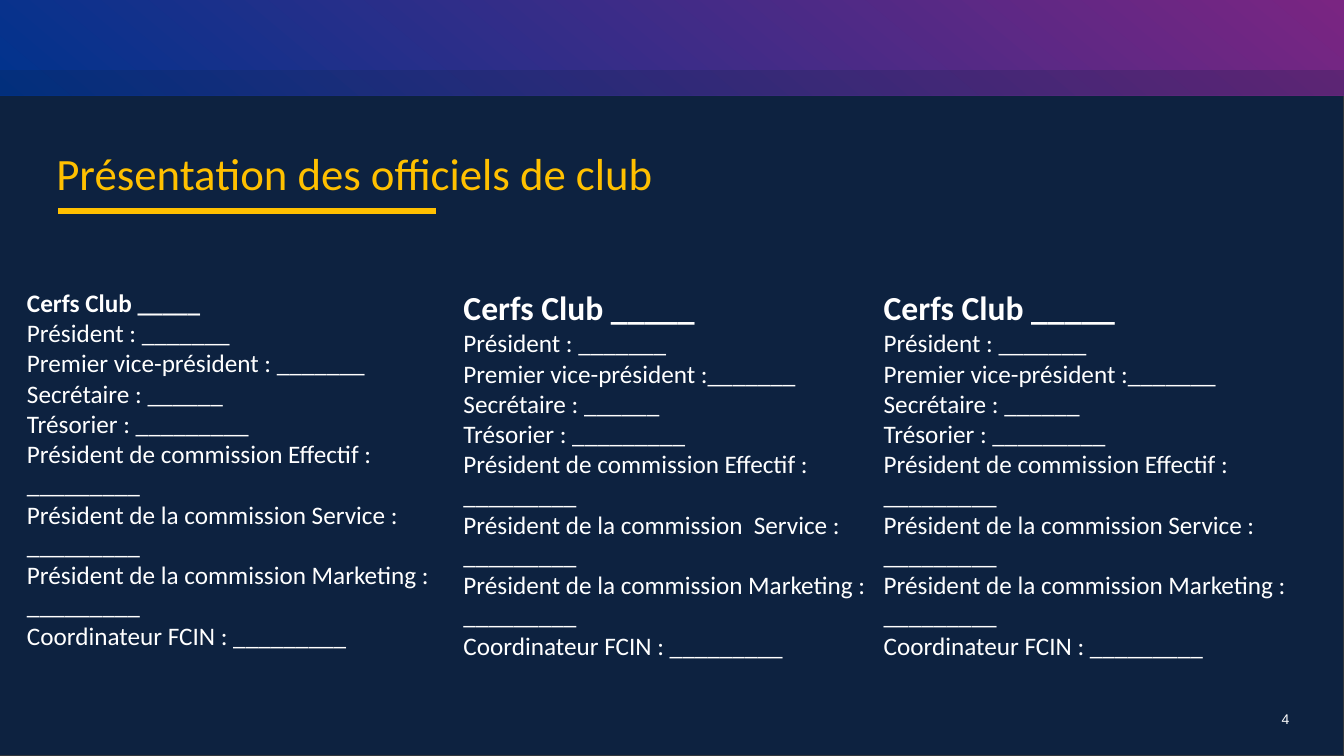
from dataclasses import dataclass

from lxml.etree import SubElement
from pptx import Presentation
from pptx.dml.color import RGBColor
from pptx.enum.shapes import MSO_CONNECTOR, MSO_SHAPE
from pptx.enum.text import MSO_ANCHOR as ANCHOR, MSO_AUTO_SIZE as AUTO_SIZE, PP_ALIGN as ALIGN
from pptx.oxml.ns import qn
from pptx.util import Cm, Pt


@dataclass(frozen=True)
class Theme:
    """Colours, fonts and type sizes of the slide."""
    navy: RGBColor = RGBColor(0x0D, 0x22, 0x40)
    outline: RGBColor = RGBColor(0x33, 0x37, 0x3B)
    blue: RGBColor = RGBColor(0x00, 0x33, 0x8D)
    purple: RGBColor = RGBColor(0x7A, 0x25, 0x82)
    gold: RGBColor = RGBColor(0xFF, 0xC0, 0x00)
    white: RGBColor = RGBColor(0xFF, 0xFF, 0xFF)
    font: str = "Calibri"
    number_font: str = "Arial"
    title_size: int = 32
    heading_size: int = 24
    body_size: int = 18
    number_size: int = 10


THEME = Theme()
WIDTH, HEIGHT = 33.87, 19.05
COLUMN_TOP = 7.11
CLUB = "Cerfs Club _____"


def officers(vice_gap=" ", service_gap=" "):
    """Return the officer lines of one club."""
    return [
        "Président : _______",
        f"Premier vice-président :{vice_gap}_______",
        "Secrétaire : ______",
        "Trésorier : _________",
        "Président de commission Effectif : _________",
        f"Président de la commission{service_gap}Service : _________",
        "Président de la commission Marketing : _________",
        "Coordinateur FCIN : _________",
    ]


COLUMNS = [
    ((0.43, COLUMN_TOP, 11.05, 9.5), THEME.body_size, officers()),
    ((11.43, COLUMN_TOP, 11.05, 9.75), THEME.heading_size, officers("", "  ")),
    ((22.02, COLUMN_TOP, 11.46, 9.75), THEME.heading_size, officers("")),
]


def place(shape, box):
    """Move a shape to a box given in centimetres."""
    shape.left, shape.top, shape.width, shape.height = map(Cm, box)


def add_rectangle(slide, box):
    """Add a plain rectangle without line or shadow."""
    shape = slide.shapes.add_shape(MSO_SHAPE.RECTANGLE, *map(Cm, box))
    shape.shadow.inherit = False
    shape.line.fill.background()
    return shape


def prepare_frame(shape):
    """Make a text frame wrap, start at the top and keep its size."""
    frame = shape.text_frame
    frame.word_wrap = True
    frame.auto_size = AUTO_SIZE.NONE
    frame.vertical_anchor = ANCHOR.TOP
    frame.margin_left = frame.margin_right = Cm(0.25)
    frame.margin_top = frame.margin_bottom = Cm(0.13)
    return frame


def add_run(paragraph, text, size, color, font=THEME.font, bold=False):
    """Add one formatted run to a left-aligned paragraph."""
    paragraph.alignment = ALIGN.LEFT
    run = paragraph.add_run()
    run.text = text
    run.font.size = Pt(size)
    run.font.name = font
    run.font.bold = bold
    run.font.color.rgb = color


def build_background(slide, box):
    """Draw the navy page with its gradient banner and shaded strip."""
    left, top, width, height = box
    page = add_rectangle(slide, box)
    page.fill.solid()
    page.fill.fore_color.rgb = THEME.navy
    page.line.color.rgb = THEME.outline
    page.line.width = Pt(0.75)

    banner = add_rectangle(slide, (left, top, width, 2.41))
    banner.fill.gradient()
    banner.fill.gradient_angle = 50
    for stop, color in zip(banner.fill.gradient_stops, (THEME.blue, THEME.purple)):
        stop.color.rgb = color

    strip = add_rectangle(slide, (left, top + 1.77, width, 0.64))
    strip.fill.solid()
    strip.fill.fore_color.rgb = THEME.navy
    color_element = strip.fill._xPr.find(qn("a:solidFill"))[0]
    SubElement(color_element, qn("a:alpha")).set("val", "21000")


def build_title(slide, title, box):
    """Fill the title and draw the gold rule below it."""
    left, top, width, height = box
    place(title, box)
    paragraph = prepare_frame(title).paragraphs[0]
    add_run(paragraph, "Présentation des officiels de club", THEME.title_size, THEME.gold)
    rule_left, rule_top = left + 0.3, top + 1.78
    rule = slide.shapes.add_connector(
        MSO_CONNECTOR.STRAIGHT, Cm(rule_left), Cm(rule_top), Cm(rule_left + 9.53), Cm(rule_top))
    rule.line.color.rgb = THEME.gold
    rule.line.width = Pt(4.5)
    SubElement(rule._element.spPr, qn("a:effectLst"))


def build_column(body, box, heading_size, lines):
    """Fill one body placeholder with a club heading and its officers."""
    place(body, box)
    frame = prepare_frame(body)
    for index, text in enumerate([CLUB, *lines]):
        paragraph = frame.add_paragraph() if index else frame.paragraphs[0]
        paragraph.space_before = paragraph.space_after = Pt(0)
        paragraph.line_spacing = 1.0
        properties = paragraph._p.get_or_add_pPr()
        properties.set("marL", "0")
        properties.set("indent", "0")
        SubElement(properties, qn("a:buNone"))
        size = THEME.body_size if index else heading_size
        add_run(paragraph, text, size, THEME.white, bold=index == 0)


def build_page_number(slide, box):
    """Write the page number in the lower right corner."""
    number = slide.shapes.add_textbox(*map(Cm, box))
    paragraph = prepare_frame(number).paragraphs[0]
    add_run(paragraph, "4", THEME.number_size, THEME.white, THEME.number_font)


def build_officers_slide(presentation):
    """Build the slide that presents the officers of three clubs."""
    slide = presentation.slides.add_slide(presentation.slide_layouts.get_by_name("Comparison"))
    title, *bodies = slide.placeholders
    build_background(slide, (0, 0, WIDTH, HEIGHT))
    for placeholder in (title, *bodies):
        slide.shapes._spTree.append(placeholder._element)
    build_title(slide, title, (1.17, 3.53, 21.59, 1.63))
    for body, (box, heading_size, lines) in zip(bodies, COLUMNS):
        build_column(body, box, heading_size, lines)
    for unused in bodies[len(COLUMNS):]:
        slide.shapes._spTree.remove(unused._element)
    build_page_number(slide, (32.05, 17.78, 1.82, 1.27))


def main():
    """Create the presentation and save it."""
    presentation = Presentation()
    presentation.slide_width, presentation.slide_height = Cm(WIDTH), Cm(HEIGHT)
    build_officers_slide(presentation)
    presentation.save("out.pptx")


if __name__ == "__main__":
    main()
